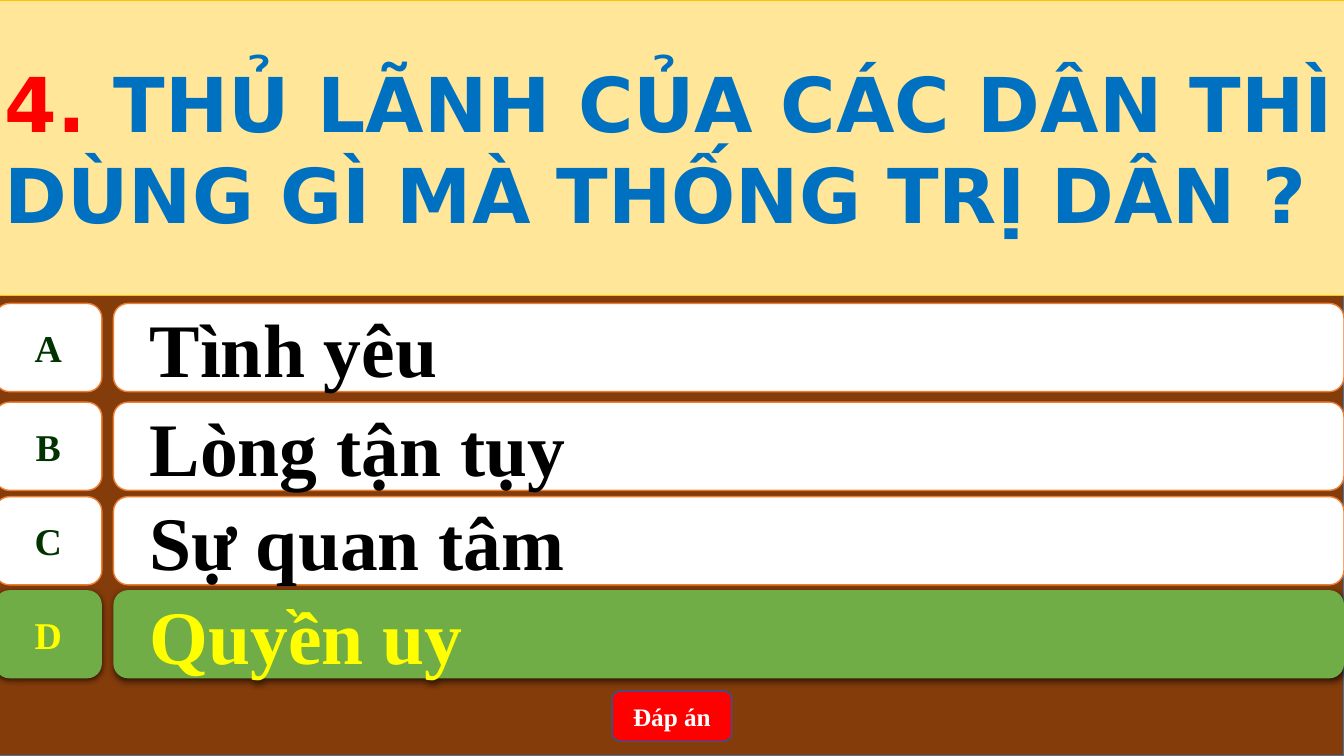
from dataclasses import dataclass

from lxml import etree
from pptx import Presentation
from pptx.dml.color import RGBColor
from pptx.enum.shapes import MSO_SHAPE
from pptx.enum.text import MSO_ANCHOR, MSO_AUTO_SIZE, PP_ALIGN
from pptx.oxml.ns import qn
from pptx.util import Emu, Pt

RECT = MSO_SHAPE.RECTANGLE
ROUND = MSO_SHAPE.ROUNDED_RECTANGLE
BADGE = MSO_SHAPE.FLOWCHART_ALTERNATE_PROCESS
LEFT, CENTER, JUSTIFY = PP_ALIGN.LEFT, PP_ALIGN.CENTER, PP_ALIGN.JUSTIFY
MIDDLE = MSO_ANCHOR.MIDDLE
NO_FIT = MSO_AUTO_SIZE.NONE


@dataclass(frozen=True)
class Theme:
    serif: str = "Times New Roman"
    sans: str = "DejaVu Sans"
    big: int = 54
    letter: int = 27
    button: int = 18
    board: str = "843C0B"
    board_line: str = "43739E"
    banner: str = "FFE699"
    banner_line: str = "FFC000"
    number: str = "FF0000"
    question: str = "0070C0"
    card: str = "FFFFFF"
    card_line: str = "ED7D31"
    letter_ink: str = "003300"
    answer_ink: str = "000000"
    correct: str = "70AD47"
    correct_ink: str = "FFFF00"
    button_fill: str = "FF0000"
    button_line: str = "325491"
    button_ink: str = "FFFFFF"


THEME = Theme()
ANSWERS = [
    ("A", "Tình yêu", 289),
    ("B", "Lòng tận tụy", 383),
    ("C", "Sự quan tâm", 473),
    ("D", "Quyền uy", 562),
]
CORRECT = "D"


def px(n):
    return Emu(n * 9525)


def rgb(code):
    return RGBColor.from_string(code)


def paint(sp, fill, line=None, width=1):
    sp.fill.solid()
    sp.fill.fore_color.rgb = rgb(fill)
    if line:
        sp.line.color.rgb = rgb(line)
        sp.line.width = Pt(width)
    else:
        sp.line.fill.background()


def add_box(s, kind, box, fill, line=None):
    sp = s.shapes.add_shape(kind, *map(px, box))
    sp.shadow.inherit = False
    paint(sp, fill, line)
    return sp


def style(r, font, size, color):
    r.font.name, r.font.size, r.font.bold = font, Pt(size), True
    r.font.color.rgb = rgb(color)


def write(sp, text, size, color, align=CENTER, wrap=True):
    tf = sp.text_frame
    tf.text = text
    tf.word_wrap, tf.vertical_anchor = wrap, MIDDLE
    p = tf.paragraphs[0]
    p.alignment = align
    style(p.runs[0], THEME.serif, size, color)
    return p


def add_shadow(sp):
    effects = sp.element.spPr.find(qn("a:effectLst"))
    shadow = etree.SubElement(effects, qn("a:outerShdw"), blurRad=str(Pt(4.5)),
                              dist=str(Pt(1.5)), dir="5400000", rotWithShape="0")
    color = etree.SubElement(shadow, qn("a:srgbClr"), val="000000")
    etree.SubElement(color, qn("a:alpha"), val="63000")


# Question banner in the title placeholder, above the board
def question(s, board, box, number, text):
    title = s.shapes.title
    board.element.addnext(title.element)
    title.left, title.top, title.width, title.height = map(px, box)
    paint(title, THEME.banner, THEME.banner_line, 0.5)
    tf = title.text_frame
    tf.word_wrap, tf.vertical_anchor, tf.auto_size = True, MIDDLE, NO_FIT
    p = tf.paragraphs[0]
    p.alignment = JUSTIFY
    for part, color in ((number, THEME.number), (text, THEME.question)):
        r = p.add_run()
        r.text = part
        style(r, THEME.sans, THEME.big, color)


# One answer row: letter badge and answer bar
def answer_row(s, box, letter, text, correct):
    x, y, w, h = box
    badge_w, bar_x = 102, 113
    fill, line = (THEME.correct, None) if correct else (THEME.card, THEME.card_line)
    letter_ink = THEME.correct_ink if correct else THEME.letter_ink
    answer_ink = THEME.correct_ink if correct else THEME.answer_ink

    badge = add_box(s, BADGE, (x, y, badge_w, h), fill, line)
    write(badge, letter, THEME.letter, letter_ink, wrap=False)

    bar = add_box(s, ROUND, (x + bar_x, y, w - bar_x, h), fill, line)
    p = write(bar, text, THEME.big, answer_ink, LEFT)
    p.level = 1
    pPr = p._p.get_or_add_pPr()
    pPr.set("marL", str(px(48)))
    pPr.set("indent", str(px(-27)))

    if correct:
        add_shadow(badge)
        add_shadow(bar)


# Button that reveals the answer
def answer_button(s, box, text):
    sp = add_box(s, ROUND, box, THEME.button_fill, THEME.button_line)
    write(sp, text, THEME.button, THEME.button_ink)


def main():
    prs = Presentation()
    prs.slide_width, prs.slide_height = px(1280), px(720)
    s = prs.slides.add_slide(prs.slide_layouts[5])

    x, w = -5, 1285
    board = add_box(s, RECT, (x, 0, w, 720), THEME.board, THEME.board_line)
    question(s, board, (x, 0, w, 281), "4. ",
             "THỦ LÃNH CỦA CÁC DÂN THÌ DÙNG GÌ MÀ THỐNG TRỊ DÂN ?")
    for letter, text, top in ANSWERS:
        answer_row(s, (x, top, w, 84), letter, text, letter == CORRECT)
    answer_button(s, (583, 658, 114, 48), "Đáp án")

    prs.save("out.pptx")


if __name__ == "__main__":
    main()
